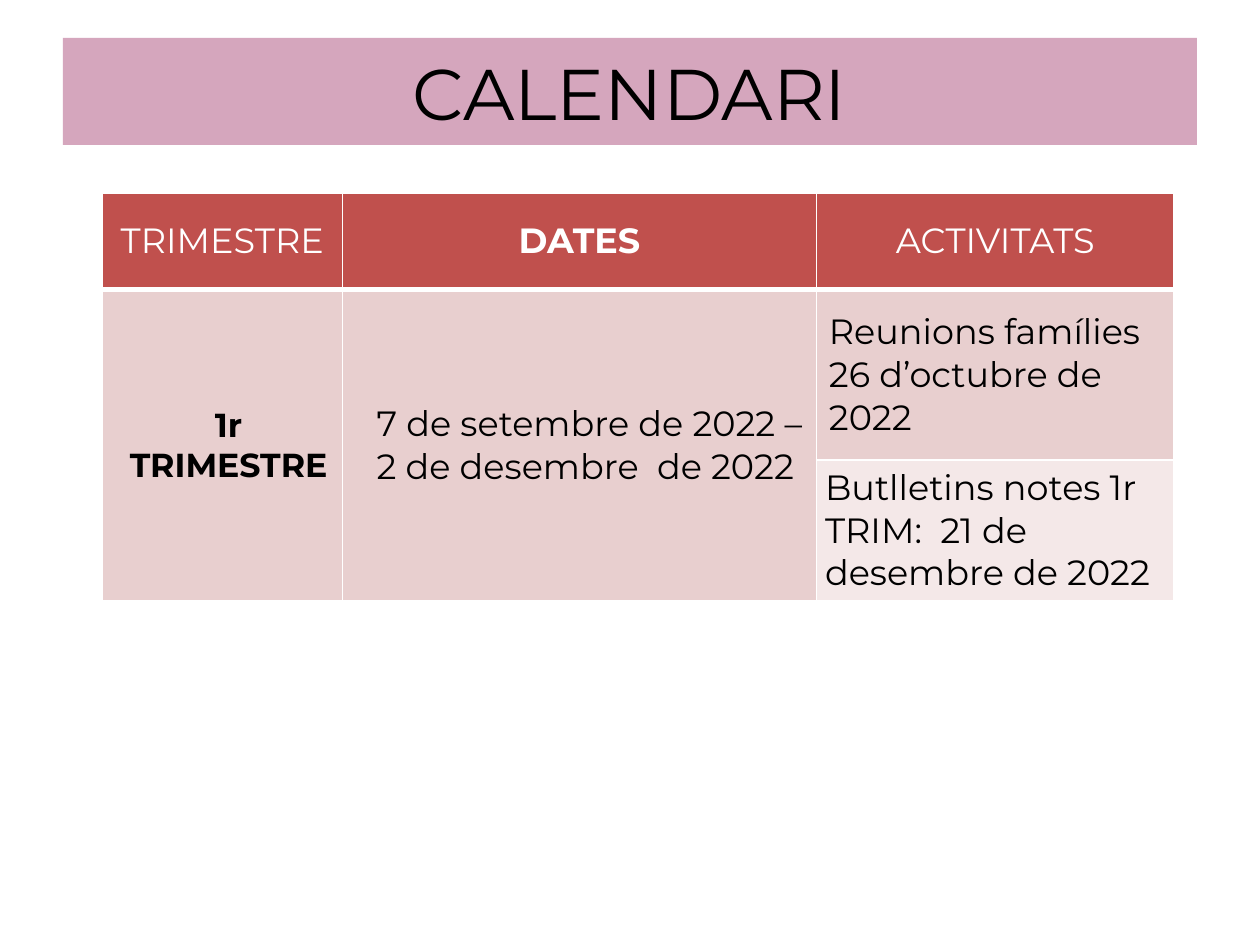
from dataclasses import dataclass

from lxml import etree
from pptx import Presentation
from pptx.dml.color import RGBColor
from pptx.enum import shapes, text
from pptx.oxml import ns
from pptx.util import Pt


@dataclass(frozen=True)
class Theme:
    font: str = "Montserrat"
    banner: str = "D5A6BD"
    header: str = "C0504D"
    band_dark: str = "E8CFCF"
    band_light: str = "F4E8E8"
    white: str = "FFFFFF"
    black: str = "000000"
    title_size: int = 41
    body_size: int = 20
    term_size: int = 19


theme = Theme()
CENTER, LEFT = text.PP_ALIGN.CENTER, text.PP_ALIGN.LEFT


def write(paragraph, words, size, color, bold=False, align=CENTER, indent=0):
    paragraph.text = words
    paragraph.alignment = align
    paragraph.font.name = theme.font
    paragraph.font.size = Pt(size)
    paragraph.font.bold = bold
    paragraph.font.color.rgb = RGBColor.from_string(color)
    if indent:
        paragraph._p.get_or_add_pPr().set("marL", str(Pt(indent)))


def add_borders(cell, bottom, top):
    properties = cell._tc.get_or_add_tcPr()
    for side, width in (("L", 1), ("R", 1), ("T", top), ("B", bottom)):
        line = etree.SubElement(properties, ns.qn(f"a:ln{side}"), w=str(Pt(width)))
        fill = etree.SubElement(line, ns.qn("a:solidFill"))
        etree.SubElement(fill, ns.qn("a:srgbClr"), val=theme.white)


presentation = Presentation()
presentation.slide_width, presentation.slide_height = Pt(720), Pt(540)
slide = presentation.slides.add_slide(presentation.slide_layouts[6])

# Term table: grid, fills and borders
column_widths = [137.5, 270.7, 204.5]
row_heights = [55.4, 97.2, 68.4]
row_fills = [theme.header, theme.band_dark, theme.band_light]
table = slide.shapes.add_table(
    3, 3, Pt(58.3), Pt(110.2), Pt(sum(column_widths)), Pt(sum(row_heights))
).table
for column, width in zip(table.columns, column_widths):
    column.width = Pt(width)
for index, (row, height, color) in enumerate(zip(table.rows, row_heights, row_fills)):
    row.height = Pt(height)
    for cell in row.cells:
        add_borders(cell, bottom=3 if index == 0 else 1, top=3 if index == 1 else 1)
        cell.fill.solid()
        cell.fill.fore_color.rgb = RGBColor.from_string(color)
for column in (0, 1):
    table.cell(1, column).merge(table.cell(2, column))

# Table text: row, column, words, size, colour, bold, alignment, indent, side margin
entries = [
    (0, 0, "TRIMESTRE", theme.body_size, theme.white, False, CENTER, 0, 7.2),
    (0, 1, "DATES", theme.body_size, theme.white, True, CENTER, 0, 7.2),
    (0, 2, "ACTIVITATS", theme.body_size, theme.white, False, CENTER, 0, 7.2),
    (1, 0, "1r TRIMESTRE", theme.term_size, theme.black, True, CENTER, 7.2, 7.2),
    (1, 1, "7 de setembre de 2022 – 2 de desembre  de 2022",
     theme.body_size, theme.black, False, LEFT, 14.4, 5),
    (1, 2, "Reunions famílies 26 d’octubre de 2022",
     theme.body_size, theme.black, False, LEFT, 0, 7.2),
    (2, 2, "Butlletins notes 1r TRIM:  21 de desembre de 2022",
     theme.body_size, theme.black, False, LEFT, 0, 5),
]
for row, column, words, size, color, bold, align, indent, margin in entries:
    cell = table.cell(row, column)
    cell.vertical_anchor = text.MSO_ANCHOR.MIDDLE
    cell.margin_left = cell.margin_right = Pt(margin)
    cell.margin_top = cell.margin_bottom = Pt(3.6)
    write(cell.text_frame.paragraphs[0], words, size, color, bold, align, indent)

# Title banner
banner = slide.shapes.add_shape(
    shapes.MSO_SHAPE.RECTANGLE, Pt(36), Pt(21.6), Pt(648), Pt(61.2)
)
banner.shadow.inherit = False
banner.fill.solid()
banner.fill.fore_color.rgb = RGBColor.from_string(theme.banner)
banner.line.fill.background()
banner.text_frame.word_wrap = True
banner.text_frame.vertical_anchor = text.MSO_ANCHOR.MIDDLE
write(banner.text_frame.paragraphs[0], "CALENDARI", theme.title_size, theme.black)

presentation.save("out.pptx")
